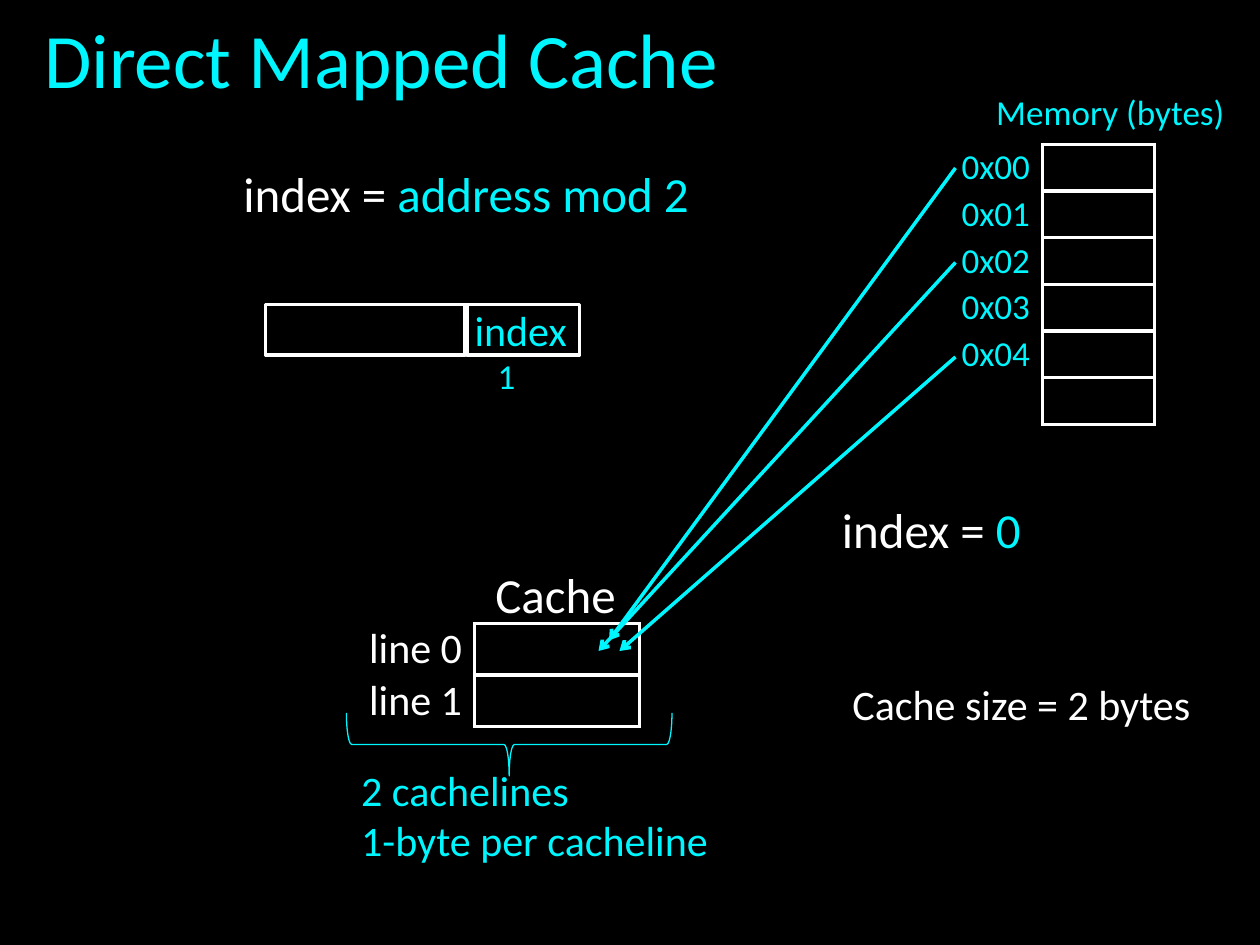
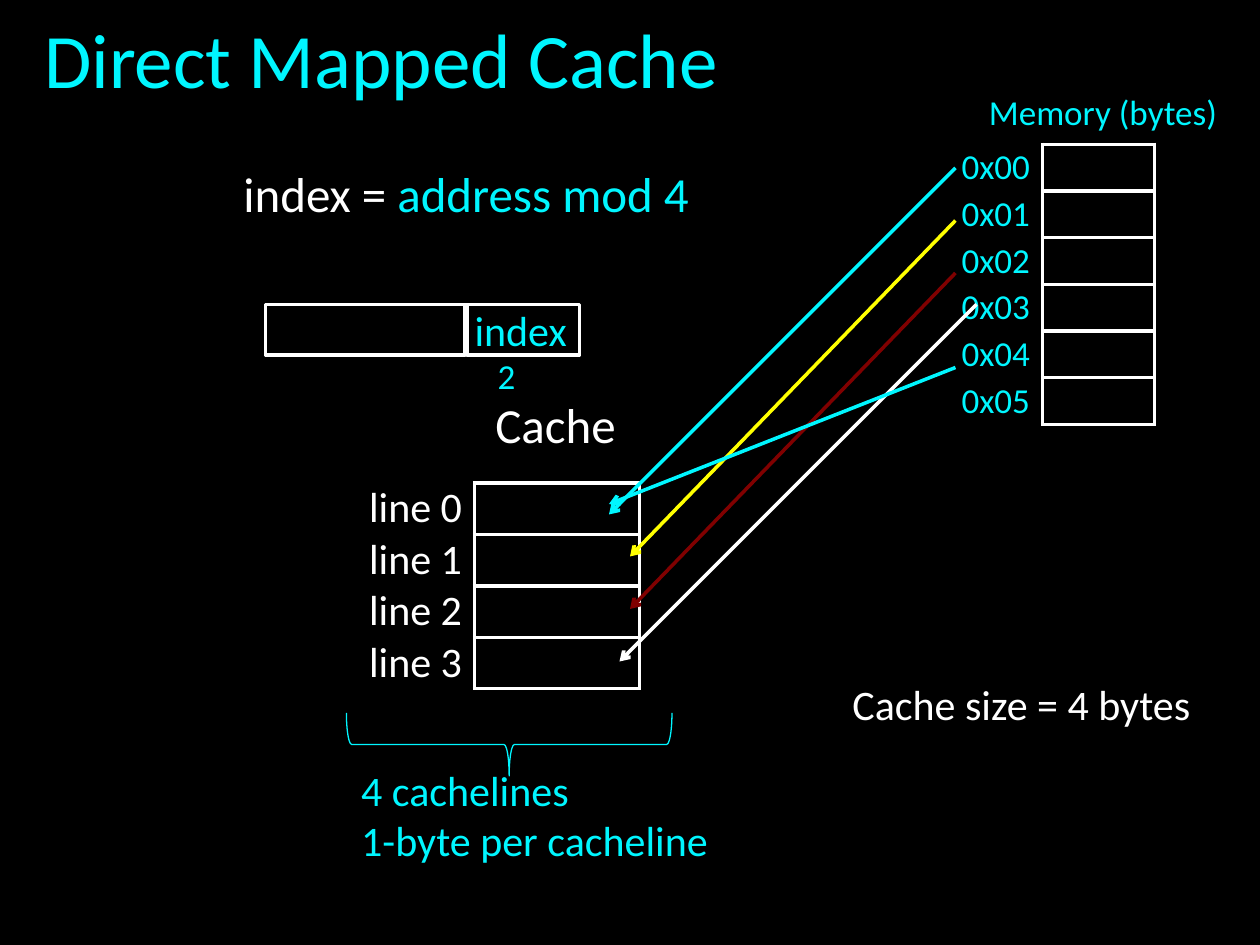
from lxml import etree
from pptx import Presentation
from pptx.dml.color import RGBColor
from pptx.enum.shapes import MSO_CONNECTOR, MSO_SHAPE
from pptx.enum.text import MSO_ANCHOR, MSO_AUTO_SIZE, PP_ALIGN
from pptx.oxml.ns import qn
from pptx.util import Inches, Pt

# Shared style
BLACK = RGBColor(0x00, 0x00, 0x00)
WHITE = RGBColor(0xFF, 0xFF, 0xFF)
CYAN = RGBColor(0x00, 0xF6, 0xFF)
YELLOW = RGBColor(0xFF, 0xFF, 0x00)
MAROON = RGBColor(0x80, 0x00, 0x00)
FONT = "Calibri"

LEFT, RIGHT = PP_ALIGN.LEFT, PP_ALIGN.RIGHT
MIDDLE = MSO_ANCHOR.MIDDLE
FIT_SHAPE, NO_FIT = MSO_AUTO_SIZE.SHAPE_TO_FIT_TEXT, MSO_AUTO_SIZE.NONE
STRAIGHT = MSO_CONNECTOR.STRAIGHT
RECTANGLE, LEFT_BRACE = MSO_SHAPE.RECTANGLE, MSO_SHAPE.LEFT_BRACE
TITLE_ONLY = 5

# The slide is a grid of 120 columns by 90 rows
CELL = Inches(1) / 12
MEMORY_ROWS = 6
INDEX_ROW = 29


def grid(*lengths):
    return [round(length * CELL) for length in lengths]


def format_run(run, size, color):
    run.font.name = FONT
    run.font.size = Pt(size)
    run.font.color.rgb = color


def add_title(slide, text):
    title = slide.shapes.title
    title.left, title.top, title.width, title.height = grid(3, 2, 114, 7)
    frame = title.text_frame
    frame.text = text
    frame.auto_size = NO_FIT
    frame.vertical_anchor = MIDDLE
    frame.paragraphs[0].alignment = LEFT
    format_run(frame.paragraphs[0].runs[0], 44, CYAN)


def add_text(slide, box, paragraphs, size, inset=True):
    """Each paragraph is a list of (text, color) runs."""
    frame = slide.shapes.add_textbox(*grid(*box)).text_frame
    frame.word_wrap = False
    frame.auto_size = FIT_SHAPE
    if not inset:
        frame.margin_left = frame.margin_right = 0
        frame.margin_top = frame.margin_bottom = 0
    for number, runs in enumerate(paragraphs):
        paragraph = frame.add_paragraph() if number else frame.paragraphs[0]
        for text, color in runs:
            run = paragraph.add_run()
            run.text = text
            format_run(run, size, color)


def add_outline(slide, kind, box, color, width):
    shape = slide.shapes.add_shape(kind, *grid(*box))
    shape.shadow.inherit = False
    shape.fill.background()
    shape.line.color.rgb = color
    shape.line.width = Pt(width)
    return shape


def add_arrow(slide, start, end, color):
    arrow = slide.shapes.add_connector(STRAIGHT, *grid(*start, *end))
    arrow.line.color.rgb = color
    arrow.line.width = Pt(2)
    line = arrow.line._get_or_add_ln()
    etree.SubElement(line, qn("a:tailEnd"), type="arrow")
    etree.SubElement(arrow._element.spPr, qn("a:effectLst"))


def set_borders(cell, visible_sides):
    properties = cell._tc.get_or_add_tcPr()
    for side in "LRTB":
        border = etree.SubElement(properties, qn("a:ln" + side), w=str(Pt(2.25)))
        if side in visible_sides:
            fill = etree.SubElement(border, qn("a:solidFill"))
            etree.SubElement(fill, qn("a:srgbClr"), val=str(WHITE))
        else:
            etree.SubElement(border, qn("a:noFill"))


def add_storage(slide, corner, column_widths, row_height, labels, size, color):
    """Boxes on the right, each with its label on the left."""
    count = len(labels)
    box = grid(*corner, sum(column_widths), row_height * count)
    table = slide.shapes.add_table(count, 2, *box).table
    table.first_row = table.horz_banding = False
    for column, width in zip(table.columns, grid(*column_widths)):
        column.width = width
    for row, label in zip(table.rows, labels):
        row.height = grid(row_height)[0]
        for cell, sides in zip(row.cells, ("R", "LRTB")):
            cell.margin_left = cell.margin_top = cell.margin_bottom = 0
            cell.vertical_anchor = MIDDLE
            set_borders(cell, sides)
            cell.fill.background()
        if label:
            paragraph = row.cells[0].text_frame.paragraphs[0]
            paragraph.text = label
            paragraph.alignment = RIGHT
            format_run(paragraph.runs[0], size, color)


def add_cache_slide(presentation, lines, index_bits, addresses, cache_top,
                    cache_label_top, memory_label_left, arrows):
    slide = presentation.slides.add_slide(presentation.slide_layouts[TITLE_ONLY])
    add_title(slide, "Direct Mapped Cache")

    # Cache and its brace
    add_storage(slide, (35, cache_top), (10.2, 15.7), 4.9,
                [f"line {number}" for number in range(lines)], 24, WHITE)
    add_text(slide, (46, cache_label_top, 14, 6.8), [[("Cache", WHITE)]], 28)
    brace = add_outline(slide, LEFT_BRACE, (45.5, 55.4, 6, 31), CYAN, 0.75)
    brace.rotation = 270
    add_text(slide, (34.4, 72.8, 33.4, 9.7),
             [[(f"{lines} cachelines", CYAN)], [("1-byte per cacheline", CYAN)]],
             24, inset=False)
    add_text(slide, (80, 64, 34.9, 6),
             [[(f"Cache size = {lines} bytes", WHITE)]], 24)

    # Memory
    labels = [f"0x{address:02}" for address in range(addresses)]
    labels += [""] * (MEMORY_ROWS - addresses)
    add_storage(slide, (88, 13.75), (11.3, 10.65), 4.45, labels, 20, CYAN)
    add_text(slide, (memory_label_left, 8, 24.4, 5.3),
             [[("Memory (bytes)", CYAN)]], 20)

    # Address fields
    add_text(slide, (22, 15, 46, 6.8),
             [[("index = ", WHITE), (f"address mod {lines}", CYAN)]], 28)
    for left, width in ((25.3, 19), (44.5, 10.7)):
        add_outline(slide, RECTANGLE, (left, INDEX_ROW, width, 4.8), WHITE, 2)
    add_text(slide, (45.2, INDEX_ROW, 8.9, 4.8), [[("index", CYAN)]], 24, inset=False)
    add_text(slide, (47.4, INDEX_ROW + 4.8, 1.7, 4.1),
             [[(str(index_bits), CYAN)]], 20, inset=False)

    # Mapping from memory to cache lines
    for start, end, color in arrows:
        add_arrow(slide, start, end, color)
    return slide


def main():
    presentation = Presentation()
    presentation.slide_width, presentation.slide_height = grid(120, 90)
    background = presentation.slide_master.background.fill
    background.solid()
    background.fore_color.rgb = BLACK

    # Two cache lines
    slide = add_cache_slide(
        presentation, lines=2, index_bits=1, addresses=5, cache_top=59.4,
        cache_label_top=53.2, memory_label_left=93.7,
        arrows=[((91, 16), (58, 61), CYAN),
                ((91, 25), (57, 62), CYAN),
                ((91, 34), (59, 62), CYAN)])
    add_text(slide, (79, 47, 46, 6.8), [[("index = ", WHITE), ("0", CYAN)]], 28)

    # Four cache lines
    add_cache_slide(
        presentation, lines=4, index_bits=2, addresses=6, cache_top=46,
        cache_label_top=37, memory_label_left=93,
        arrows=[((91, 21), (60, 53), YELLOW),
                ((91, 16), (58, 49), CYAN),
                ((93, 29), (59, 63), WHITE),
                ((91, 26), (60, 58), MAROON),
                ((91, 35), (58, 48), CYAN)])

    presentation.save("out.pptx")


if __name__ == "__main__":
    main()
